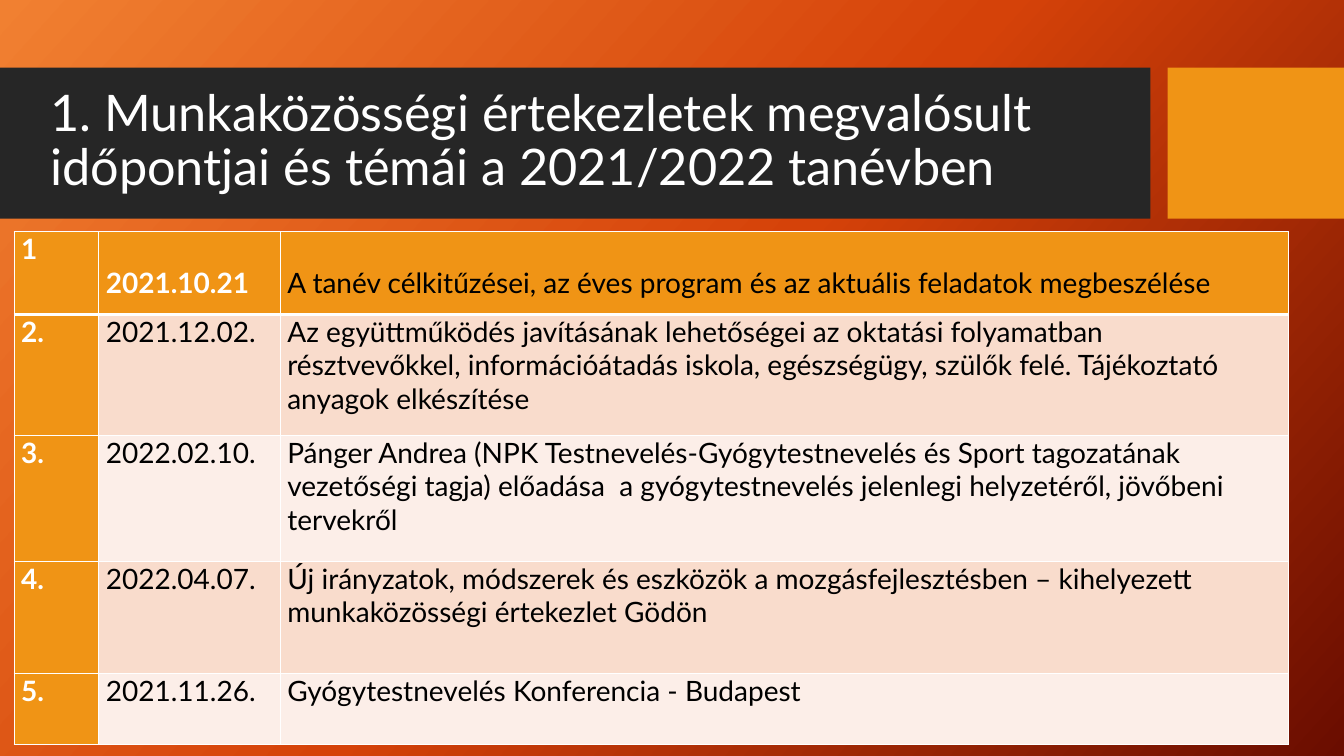
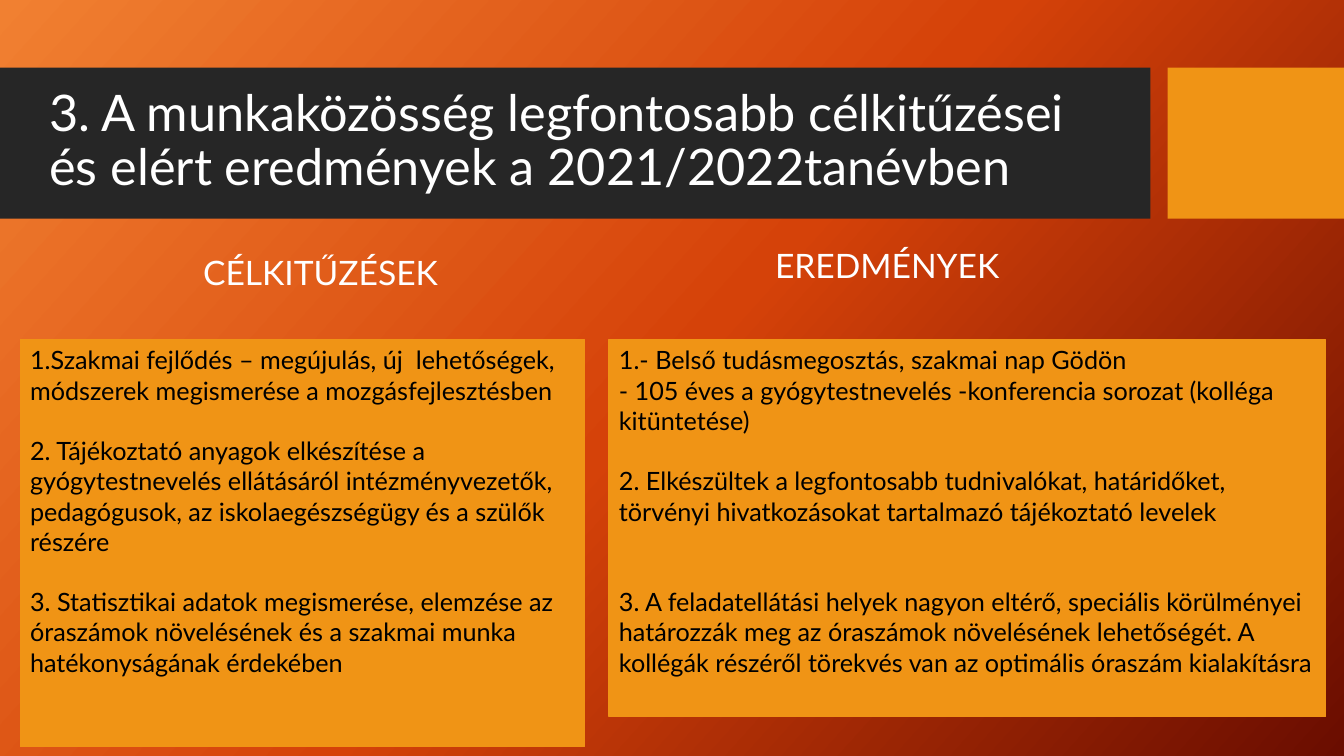
from copy import deepcopy
from dataclasses import dataclass

from lxml.etree import SubElement
from pptx import Presentation
from pptx.dml.color import RGBColor as RGB
from pptx.enum.shapes import MSO_SHAPE as Kind
from pptx.enum.text import MSO_ANCHOR as Anchor, PP_ALIGN as Align
from pptx.oxml.ns import qn
from pptx.util import Inches, Pt

FONT = "Lato"
HEX = {
    "dark": "262626", "gold": "F09415", "white": "FFFFFF", "black": "000000",
    "peach": "F9DCCC", "pale": "FCEEE8",
    "glow": "F18031", "flame": "D54209", "ember": "6A0D00",
}
LINE = 1.2  # line height of the font, in ems


@dataclass
class Box:
    x: float
    y: float
    w: float
    h: float

    def emu(self):
        return [Inches(n) for n in (self.x, self.y, self.w, self.h)]


@dataclass
class Para:
    text: str
    skip: int = 0  # empty lines above


@dataclass
class Panel:
    head: str
    top: Box
    body: Box
    paras: list[Para]


@dataclass
class Row:
    no: str
    date: str
    topic: str
    high: float


def rgb(name: str) -> RGB:
    return RGB.from_string(HEX[name])


def style(par, size: int, color: str, bold: bool = False) -> None:
    for run in par.runs:
        font = run.font
        font.name, font.size, font.bold = FONT, Pt(size), bold
        font.color.rgb = rgb(color)


def add_rect(slide, box: Box, color: str):
    rect = slide.shapes.add_shape(Kind.RECTANGLE, *box.emu())
    rect.shadow.inherit = False
    rect.fill.solid()
    rect.fill.fore_color.rgb = rgb(color)
    rect.line.fill.background()
    return rect


def add_label(slide, box: Box, text: str, size: int, align) -> None:
    frame = slide.shapes.add_textbox(*box.emu()).text_frame
    frame.word_wrap = True
    frame.vertical_anchor = Anchor.MIDDLE
    frame.text = text
    par = frame.paragraphs[0]
    par.alignment, par.line_spacing = align, 0.9
    style(par, size, "white")


def add_slide(deck, title: str, box: Box):
    """Slide with the shared background, bands and title style."""
    slide = deck.slides.add_slide(deck.slide_layouts[6])
    fill = slide.background.fill
    fill.gradient()
    fill.gradient_angle = 360 - 42
    stops = next(slide.element.iter(qn("a:gsLst")))
    stops.append(deepcopy(stops[0]))
    for i, (stop, name) in enumerate(zip(fill.gradient_stops, ("glow", "flame", "ember"))):
        stop.position = i / 2
        stop.color.rgb = rgb(name)
    add_rect(slide, Box(0, 0.67, 11.41, 1.5), "dark")
    add_rect(slide, Box(11.58, 0.67, 1.75, 1.5), "gold")
    add_label(slide, box, title, 36, Align.LEFT)
    return slide


def add_edges(cell, top: int, base: int) -> None:
    props = cell._tc.get_or_add_tcPr()
    for i, (side, width) in enumerate(zip("LRTB", (1, 1, top, base))):
        edge = SubElement(props, qn(f"a:ln{side}"), w=str(Pt(width)))
        fill = SubElement(edge, qn("a:solidFill"))
        SubElement(fill, qn("a:srgbClr"), val=HEX["white"])
        props.insert(i, edge)


def add_grid(slide, box: Box, cols: list[float], rows: list[Row]) -> None:
    table = slide.shapes.add_table(len(rows), len(cols), *box.emu()).table
    for col, width in zip(table.columns, cols):
        col.width = Inches(width)
    for r, row in enumerate(rows):
        table.rows[r].height = Inches(row.high)
        band = "peach" if r % 2 else "pale"
        for c, text in enumerate((row.no, row.date, row.topic)):
            cell = table.cell(r, c)
            cell.margin_left = cell.margin_right = Inches(0.07)
            # The first row starts its date and topic one line lower
            cell.margin_top = Pt(20 * LINE) if r == 0 and c else 0
            cell.margin_bottom = 0
            cell.fill.solid()
            cell.fill.fore_color.rgb = rgb("gold" if r == 0 or c == 0 else band)
            add_edges(cell, 3 if r == 1 else 1, 3 if r == 0 else 1)
            cell.text_frame.text = text
            strong = c == 0 or (r == 0 and c == 1)
            style(cell.text_frame.paragraphs[0], 20, "white" if strong else "black", strong)


def add_panel(slide, panel: Panel) -> None:
    add_label(slide, panel.top, panel.head, 24, Align.CENTER)
    rect = add_rect(slide, panel.body, "gold")
    rect.line.color.rgb = rgb("gold")
    rect.line.width = Pt(0.75)
    frame = rect.text_frame
    frame.word_wrap = True
    frame.vertical_anchor = Anchor.TOP
    frame.text = "\n".join(p.text for p in panel.paras)
    for par, item in zip(frame.paragraphs, panel.paras):
        par.alignment = Align.LEFT
        if item.skip:
            par.space_before = Pt(item.skip * 18 * LINE)
        style(par, 18, "black")


ROWS = [
    Row("1", "2021.10.21", "A tanév célkitűzései, az éves program és az aktuális feladatok megbeszélése", 0.82),
    Row("2.", "2021.12.02.", "Az együttműködés javításának lehetőségei az oktatási folyamatban résztvevőkkel, "
        "információátadás iskola, egészségügy, szülők felé. Tájékoztató anyagok elkészítése", 1.2),
    Row("3.", "2022.02.10.", "Pánger Andrea (NPK Testnevelés-Gyógytestnevelés és Sport tagozatának vezetőségi "
        "tagja) előadása  a gyógytestnevelés jelenlegi helyzetéről, jövőbeni tervekről", 1.25),
    Row("4.", "2022.04.07.", "Új irányzatok, módszerek és eszközök a mozgásfejlesztésben – kihelyezett "
        "munkaközösségi értekezlet Gödön", 1.11),
    Row("5.", "2021.11.26.", "Gyógytestnevelés Konferencia - Budapest", 0.71),
]

PANELS = [
    Panel("CÉLKITŰZÉSEK", Box(1.18, 2.45, 4, 0.55), Box(0.2, 3.37, 5.6, 4.04), [
        Para("1.Szakmai fejlődés – megújulás, új  lehetőségek, módszerek megismerése a mozgásfejlesztésben"),
        Para("2. Tájékoztató anyagok elkészítése a gyógytestnevelés ellátásáról intézményvezetők, "
             "pedagógusok, az iskolaegészségügy és a szülők részére", 1),
        Para("3. Statisztikai adatok megismerése, elemzése az óraszámok növelésének és a szakmai munka "
             "hatékonyságának érdekében", 1),
    ]),
    Panel("EREDMÉNYEK", Box(6.8, 2.38, 4, 0.55), Box(6.04, 3.37, 7.11, 3.74), [
        Para("1.- Belső tudásmegosztás, szakmai nap Gödön"),
        Para("- 105 éves a gyógytestnevelés -konferencia sorozat (kolléga kitüntetése)"),
        Para("2. Elkészültek a legfontosabb tudnivalókat, határidőket, törvényi hivatkozásokat "
             "tartalmazó tájékoztató levelek", 1),
        Para("3. A feladatellátási helyek nagyon eltérő, speciális körülményei határozzák meg az "
             "óraszámok növelésének lehetőségét. A kollégák részéről törekvés van az optimális "
             "óraszám kialakításra", 2),
    ]),
]


def main() -> None:
    deck = Presentation()
    deck.slide_width, deck.slide_height = Inches(13.33), Inches(7.5)

    # Meetings
    slide = add_slide(deck, "1. Munkaközösségi értekezletek megvalósult időpontjai és témái "
                      "a 2021/2022 tanévben", Box(0.4, 0.82, 11.02, 1.18))
    add_grid(slide, Box(0.14, 2.3, 12.64, 5.09), [0.84, 1.8, 10], ROWS)

    # Goals and results
    slide = add_slide(deck, "3. A munkaközösség legfontosabb célkitűzései és elért eredmények "
                      "a 2021/2022tanévben", Box(0.39, 0.9, 10.8, 1.02))
    for panel in PANELS:
        add_panel(slide, panel)

    deck.save("out.pptx")


if __name__ == "__main__":
    main()
